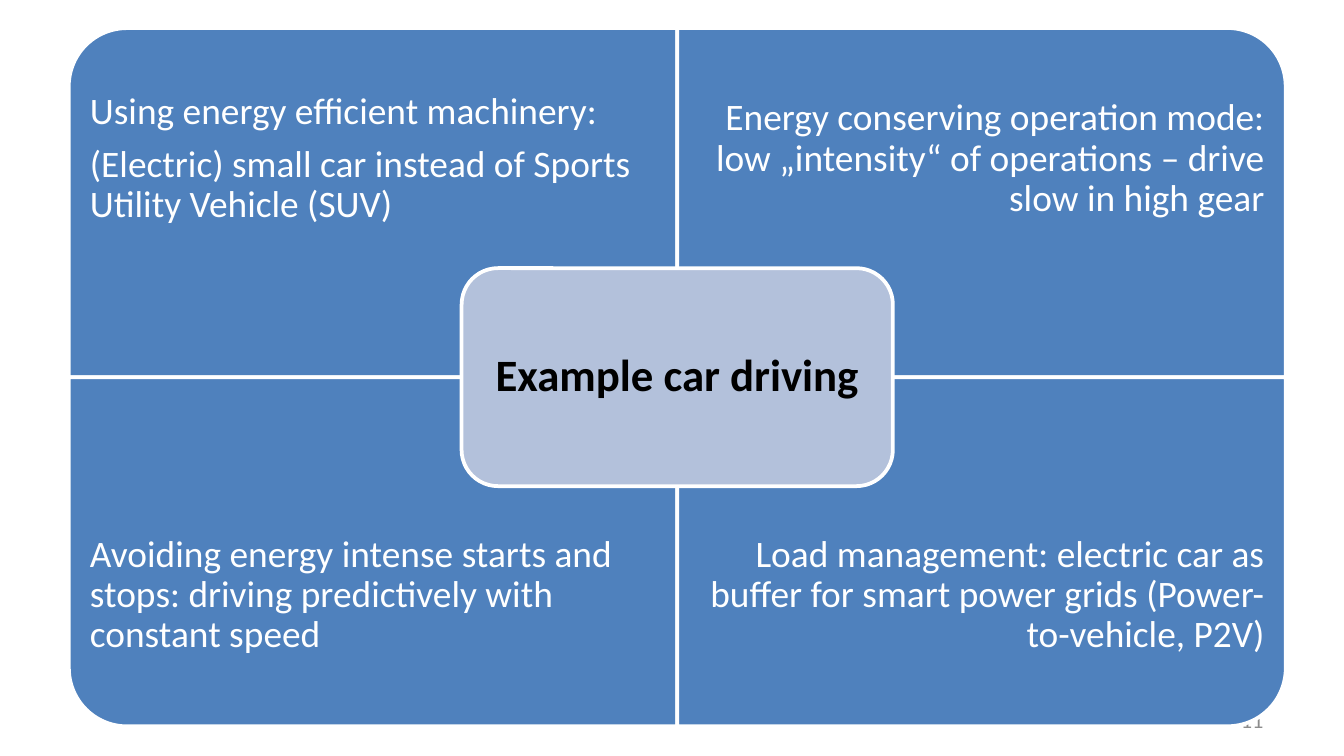
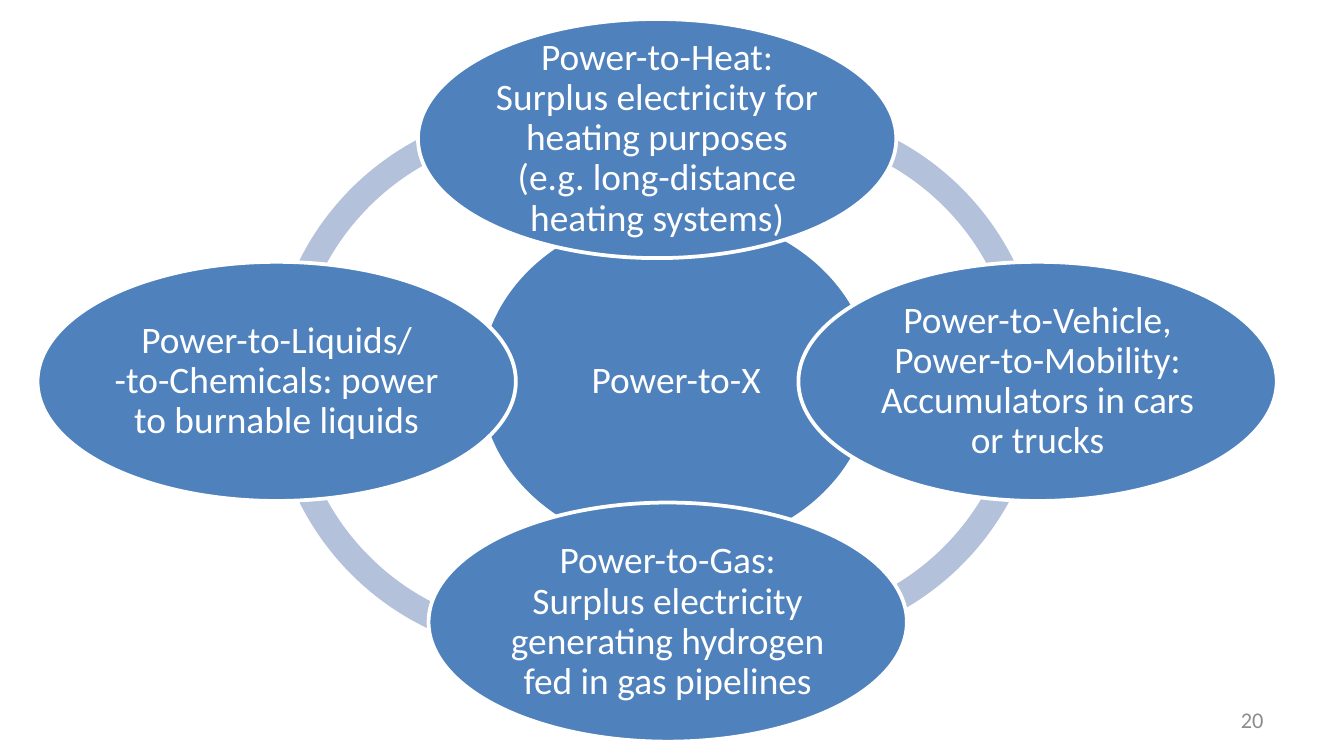
from dataclasses import dataclass

import pptx
import pptx.dml.color
import pptx.enum.shapes
import pptx.enum.text
import pptx.util

Cm = pptx.util.Cm
Pt = pptx.util.Pt
RGB = pptx.dml.color.RGBColor
SHAPE = pptx.enum.shapes.MSO_SHAPE
ALIGN = pptx.enum.text.PP_ALIGN
BLANK_LAYOUT = 6


@dataclass(frozen=True)
class Theme:
    font: str = "Calibri"
    blue: RGB = RGB(0x4F, 0x81, 0xBD)
    pale: RGB = RGB(0xB3, 0xC1, 0xDB)
    white: RGB = RGB(0xFF, 0xFF, 0xFF)
    black: RGB = RGB(0, 0, 0)
    grey: RGB = RGB(0x8C, 0x8C, 0x8C)
    body_size: int = 20
    centre_size: int = 24
    number_size: int = 12
    outline: float = 2
    line_spacing: float = 0.9
    space_after: int = 7


THEME = Theme()


@dataclass(frozen=True)
class Box:
    x: float
    y: float
    width: float
    height: float

    @classmethod
    def centred(cls, x: float, y: float, width: float, height: float) -> "Box":
        return cls(x - width / 2, y - height / 2, width, height)

    def turned(self) -> "Box":
        return Box.centred(self.x + self.width / 2, self.y + self.height / 2,
                           self.height, self.width)

    def lengths(self) -> tuple:
        return Cm(self.x), Cm(self.y), Cm(self.width), Cm(self.height)


@dataclass(frozen=True)
class Quadrant:
    column: int
    row: int
    rotation: int
    paragraphs: tuple


@dataclass(frozen=True)
class Arc:
    x: float
    y: float
    start: float
    end: float


@dataclass(frozen=True)
class Option:
    x: float
    y: float
    text: str


QUADRANTS = (
    Quadrant(0, 0, 270, ("Using energy efficient machinery:",
                         "(Electric) small car instead of Sports Utility Vehicle (SUV)")),
    Quadrant(1, 0, 0, ("Energy conserving operation mode: low „intensity“ of "
                       "operations – drive slow in high gear",)),
    Quadrant(0, 1, 180, ("Avoiding energy intense starts and stops: driving "
                         "predictively with constant speed",)),
    Quadrant(1, 1, 90, ("Load management: electric car as buffer for smart power "
                        "grids (Power-to-vehicle, P2V)",)),
)
MATRIX = Box(1.3, 0.53, 23, 13.2)

HUB_X, HUB_Y = 12.78, 7.21
ARC_SIZE = 10.46
ARC_THICKNESS = 0.046
ARCS = (
    Arc(10.34, 7.26, 180.8, 294.05),
    Arc(10.34, 7.16, 63.48, 179.69),
    Arc(14.48, 6.98, 2.39, 111.41),
    Arc(14.48, 7.26, 246.21, 359.09),
)
OPTIONS = (
    Option(12.42, 2.62, "Power-to-Heat: Surplus electricity for heating purposes "
                        "(e.g. long-distance heating systems)"),
    Option(19.61, HUB_Y, "Power-to-Vehicle, Power-to-Mobility: Accumulators in cars or trucks"),
    Option(12.62, 11.76, "Power-to-Gas: Surplus electricity generating hydrogen "
                         "fed in gas pipelines"),
    Option(5.23, HUB_Y, "Power-to-Liquids/ -to-Chemicals: power to burnable liquids"),
)


def write(shape, *paragraphs: str, size: int = THEME.body_size, color: RGB = THEME.white,
          align: ALIGN = ALIGN.CENTER, bold: bool = False, inset: float = 0.08,
          line_spacing: float = THEME.line_spacing,
          space_after: int = THEME.space_after) -> None:
    frame = shape.text_frame
    frame.word_wrap = True
    frame.vertical_anchor = pptx.enum.text.MSO_ANCHOR.MIDDLE
    frame.margin_left = frame.margin_right = Cm(inset)
    frame.margin_top = frame.margin_bottom = Cm(inset)
    for index, text in enumerate(paragraphs):
        paragraph = frame.add_paragraph() if index else frame.paragraphs[0]
        paragraph.alignment = align
        paragraph.line_spacing = line_spacing
        paragraph.space_after = Pt(space_after)
        run = paragraph.add_run()
        run.text = text
        run.font.name = THEME.font
        run.font.size = Pt(size)
        run.font.bold = bold
        run.font.color.rgb = color


def draw(slide, kind: SHAPE, box: Box, fill: RGB = THEME.blue, outlined: bool = True):
    shape = slide.shapes.add_shape(kind, *box.lengths())
    shape.shadow.inherit = False
    shape.fill.solid()
    shape.fill.fore_color.rgb = fill
    if outlined:
        shape.line.color.rgb = THEME.white
        shape.line.width = Pt(THEME.outline)
    else:
        shape.line.fill.background()
    return shape


def add_numbered_slide(deck, number: int):
    slide = deck.slides.add_slide(deck.slide_layouts[BLANK_LAYOUT])
    page_number = slide.shapes.add_textbox(*Box(18.2, 13.23, 5.93, 0.76).lengths())
    write(page_number, str(number), size=THEME.number_size, color=THEME.grey,
          align=ALIGN.RIGHT, inset=0.25, line_spacing=1, space_after=0)
    return slide


def draw_quadrant(slide, quadrant: Quadrant) -> None:
    width, height = MATRIX.width / 2, MATRIX.height / 2
    box = Box(MATRIX.x + quadrant.column * width, MATRIX.y + quadrant.row * height,
              width, height)
    sideways = quadrant.rotation % 180 != 0
    panel = draw(slide, SHAPE.ROUND_1_RECTANGLE, box.turned() if sideways else box)
    panel.rotation = quadrant.rotation
    text_height = height * 0.75
    text_top = box.y + quadrant.row * (height - text_height)
    message = slide.shapes.add_textbox(*Box(box.x, text_top, width, text_height).lengths())
    write(message, *quadrant.paragraphs, inset=0.4,
          align=ALIGN.RIGHT if quadrant.column else ALIGN.LEFT)


def draw_arc(slide, arc: Arc) -> None:
    band = draw(slide, SHAPE.BLOCK_ARC, Box.centred(arc.x, arc.y, ARC_SIZE, ARC_SIZE),
                fill=THEME.pale, outlined=False)
    for index, value in enumerate((arc.start * 0.6, arc.end * 0.6, ARC_THICKNESS)):
        band.adjustments[index] = value


def draw_option(slide, option: Option, width: float = 9.04, height: float = 4.52) -> None:
    bubble = draw(slide, SHAPE.OVAL, Box.centred(option.x, option.y, width, height))
    write(bubble, option.text)


def build_car_driving(deck) -> None:
    slide = add_numbered_slide(deck, 11)
    for quadrant in QUADRANTS:
        draw_quadrant(slide, quadrant)
    topic = draw(slide, SHAPE.ROUNDED_RECTANGLE,
                 Box.centred(MATRIX.x + MATRIX.width / 2, MATRIX.y + MATRIX.height / 2,
                             8.15, 4.12), fill=THEME.pale)
    write(topic, "Example car driving", size=THEME.centre_size, color=THEME.black,
          bold=True, inset=0.25)


def build_power_to_x(deck) -> None:
    slide = add_numbered_slide(deck, 20)
    for arc in ARCS:
        draw_arc(slide, arc)
    draw_option(slide, Option(HUB_X, HUB_Y, "Power-to-X"), width=7.47, height=6.45)
    for option in OPTIONS:
        draw_option(slide, option)


def main() -> None:
    deck = pptx.Presentation()
    deck.slide_width, deck.slide_height = Cm(25.4), Cm(14.29)
    build_car_driving(deck)
    build_power_to_x(deck)
    deck.save("out.pptx")


if __name__ == "__main__":
    main()
